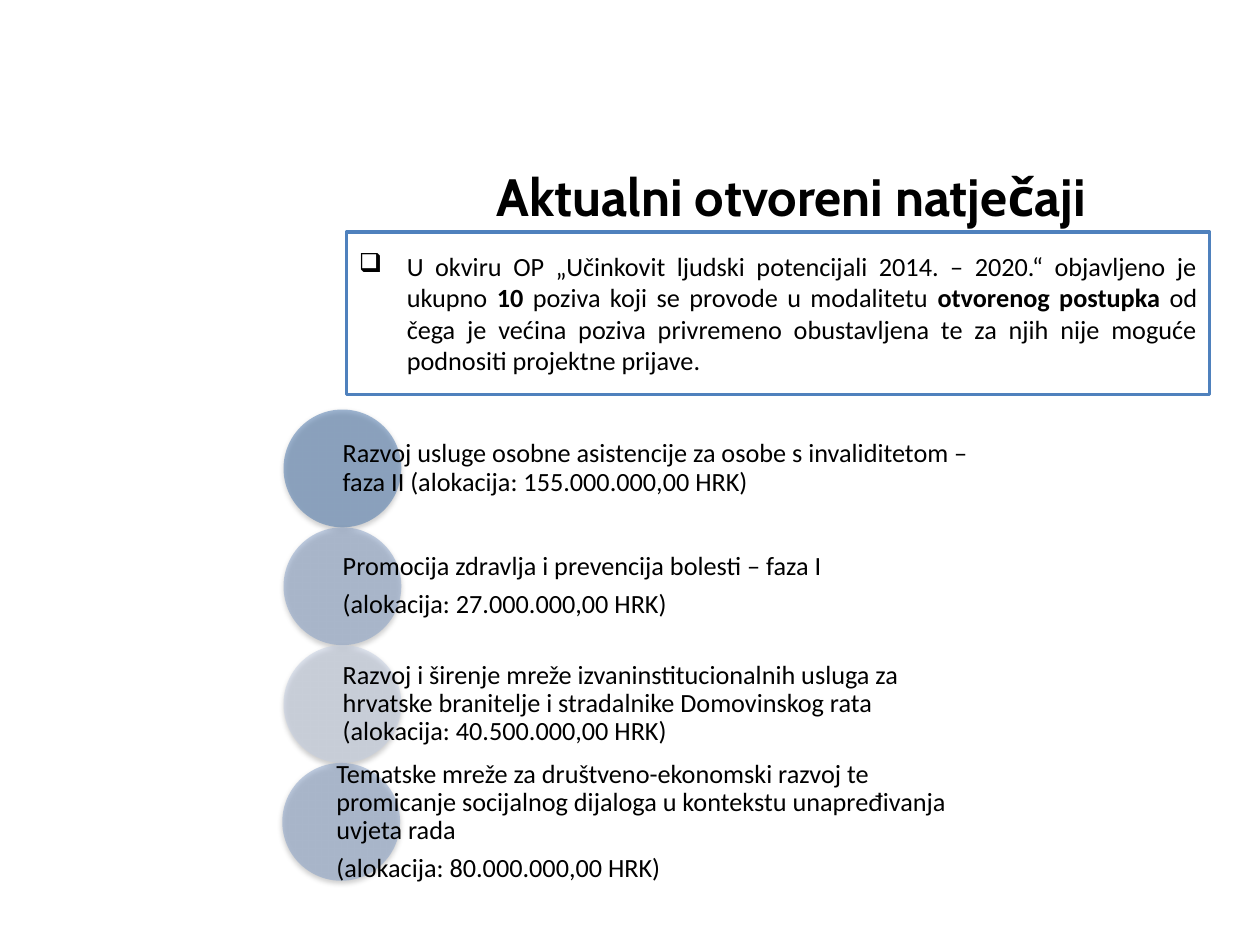
import pptx
import pptx.util
import pptx.dml.color
import pptx.enum.shapes
import pptx.enum.text
import pptx.oxml
import pptx.oxml.ns

Inches, Pt = pptx.util.Inches, pptx.util.Pt
SHAPE = pptx.enum.shapes.MSO_SHAPE
ALIGN = pptx.enum.text.PP_ALIGN
MIDDLE = pptx.enum.text.MSO_ANCHOR.MIDDLE
NS = pptx.oxml.ns.nsdecls("a")

# Content
TITLE = "Aktualni otvoreni natječaji "
INTRO = [  # text, bold
    ("U okviru OP „Učinkovit ljudski potencijali 2014. – 2020.“ objavljeno je ukupno ", False),
    ("10 ", True),
    ("poziva koji se provode u modalitetu ", False),
    ("otvorenog postupka ", True),
    ("od čega je većina poziva privremeno obustavljena te za njih nije moguće "
     "podnositi projektne prijave.", False),
]
CALLS = [  # circle colour, circle left, text left, paragraphs
    ("blue", 2.25, 2.72,
     ["Razvoj usluge osobne asistencije za osobe s invaliditetom – faza II "
      "(alokacija: 155.000.000,00 HRK)"]),
    ("mid", 2.25, 2.72,
     ["Promocija zdravlja i prevencija bolesti – faza I",
      "(alokacija: 27.000.000,00 HRK)"]),
    ("pale", 2.25, 2.72,
     ["Razvoj i širenje mreže izvaninstitucionalnih usluga za hrvatske branitelje "
      "i stradalnike Domovinskog rata (alokacija: 40.500.000,00 HRK)"]),
    ("mid", 2.24, 2.67,
     ["Tematske mreže za društveno-ekonomski razvoj te promicanje socijalnog "
      "dijaloga u kontekstu unapređivanja uvjeta rada",
      "(alokacija: 80.000.000,00 HRK)"]),
]
COLORS = {"text": "000000", "white": "FFFFFF", "border": "4F81BD",
          "blue": "4875AC", "mid": "859FC7", "pale": "C3CEE2"}

# Layout in inches
TITLE_BOX = (2.93, 1.05, 6.79, 1.01)
INTRO_BOX = (2.75, 1.84, 6.85, 1.29)
LIST_TOP, ROW, LIST_RIGHT = 3.25, 0.935, 7.7
INDENT = Inches(0.38)


def rgb(name):
    return pptx.dml.color.RGBColor.from_string(COLORS[name])


def style(r, size=15, font="Calibri", bold=False):
    r.font.size, r.font.name, r.font.bold = Pt(size), font, bold
    r.font.color.rgb = rgb("text")


def add_text(s, box):
    sp = s.shapes.add_textbox(*map(Inches, box))
    sp.text_frame.word_wrap = True
    sp.text_frame.vertical_anchor = MIDDLE
    return sp.text_frame


def add_circle(s, left, top, color):
    sp = s.shapes.add_shape(SHAPE.OVAL, *map(Inches, (left, top, ROW, ROW)))
    sp.fill.solid()
    sp.fill.fore_color.rgb = rgb(color)
    sp.line.fill.background()
    # Half-transparent fill and soft shadow below
    clr = sp.fill._xPr.find(".//" + pptx.oxml.ns.qn("a:srgbClr"))
    clr.append(pptx.oxml.parse_xml(f'<a:alpha {NS} val="50000"/>'))
    sp._element.spPr.append(pptx.oxml.parse_xml(
        f'<a:effectLst {NS}><a:outerShdw blurRad="{Pt(3.1)}" dist="{Pt(1.6)}" '
        'dir="5400000" rotWithShape="0"><a:srgbClr val="000000">'
        '<a:alpha val="38000"/></a:srgbClr></a:outerShdw></a:effectLst>'))


prs = pptx.Presentation()
prs.slide_width, prs.slide_height = Inches(10), Inches(7.5)
s = prs.slides.add_slide(prs.slide_layouts[6])

# Title
p = add_text(s, TITLE_BOX).paragraphs[0]
p.text = TITLE
p.alignment = ALIGN.CENTER
style(p.runs[0], 30, "Cabin", True)

# Framed introduction
sp = s.shapes.add_shape(SHAPE.RECTANGLE, *map(Inches, INTRO_BOX))
sp.shadow.inherit = False
sp.fill.solid()
sp.fill.fore_color.rgb = rgb("white")
sp.line.color.rgb = rgb("border")
sp.line.width = Pt(2)
tf = sp.text_frame
tf.word_wrap = True
tf.vertical_anchor = MIDDLE
p = tf.paragraphs[0]
p.alignment = ALIGN.JUSTIFY
pPr = p._p.get_or_add_pPr()
pPr.set("marL", str(INDENT))
pPr.set("indent", str(-INDENT))
pPr.append(pptx.oxml.parse_xml(f'<a:buChar {NS} char="❑"/>'))
for text, bold in INTRO:
    r = p.add_run()
    r.text = text
    style(r, bold=bold)

# List of calls
for i, (color, circle_left, left, lines) in enumerate(CALLS):
    top = LIST_TOP + i * ROW
    add_circle(s, circle_left, top, color)
    tf = add_text(s, (left, top, LIST_RIGHT - left, ROW))
    tf.margin_left = tf.margin_right = 0
    tf.margin_top = tf.margin_bottom = Inches(0.02)
    tf.text = "\n".join(lines)
    for p in tf.paragraphs:
        p.line_spacing = 0.9
        p.space_after = Pt(5.25)
        style(p.runs[0])

prs.save("out.pptx")
